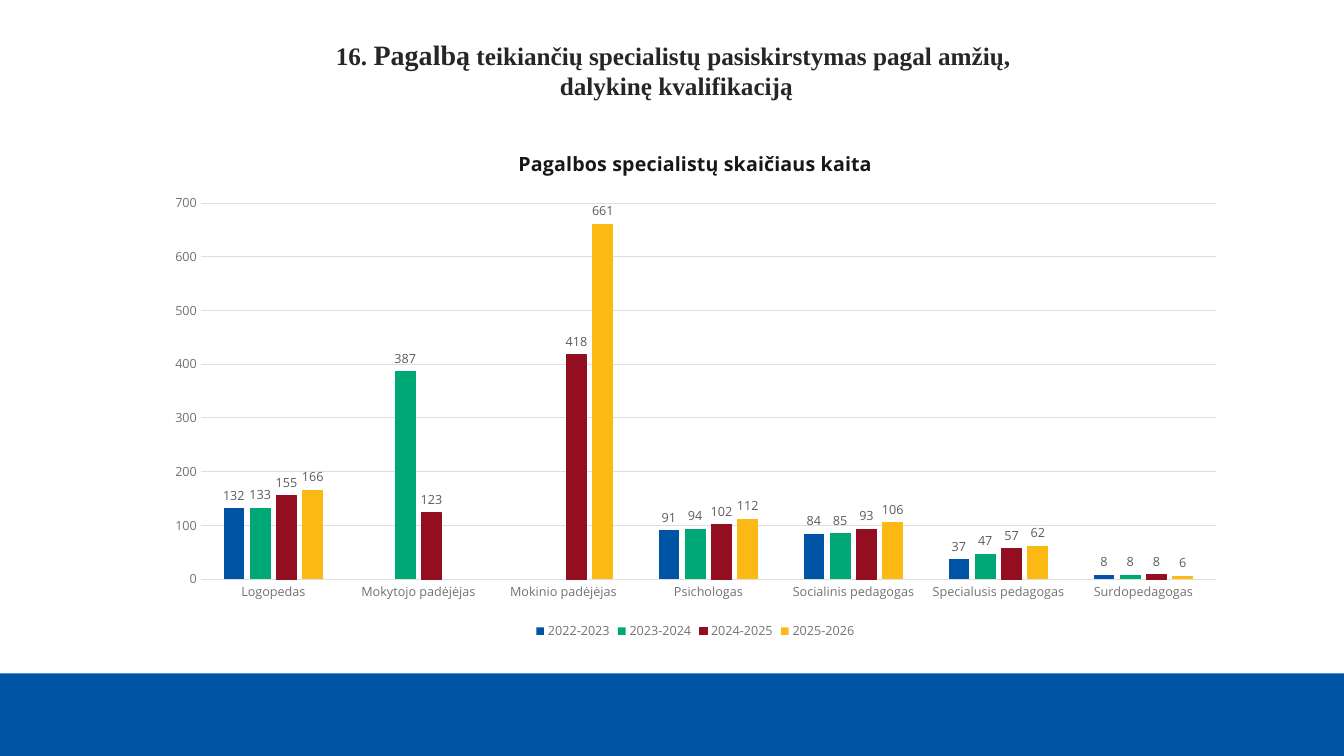
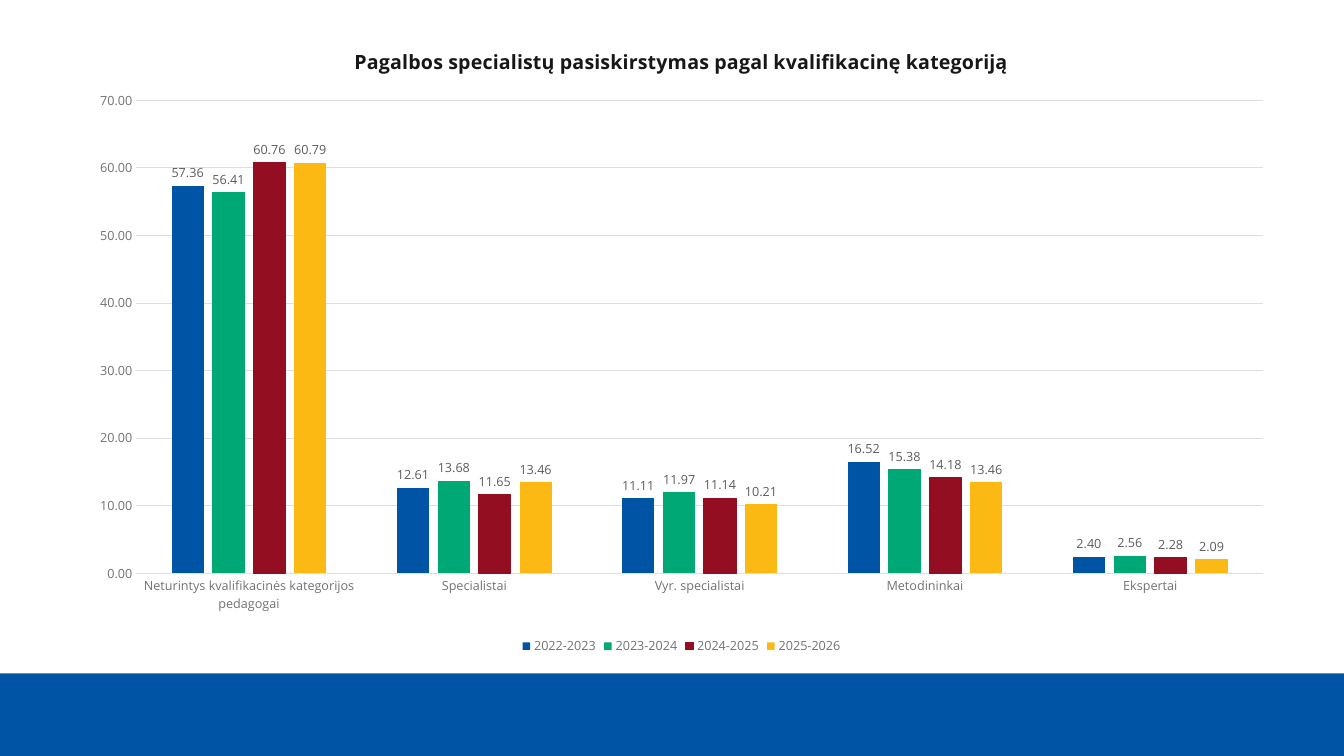
from dataclasses import dataclass

import lxml.etree
import pptx
import pptx.chart.data
import pptx.dml.color
import pptx.enum.chart
import pptx.enum.shapes
import pptx.enum.text
import pptx.oxml
import pptx.oxml.ns
import pptx.util

Cm = pptx.util.Cm
Pt = pptx.util.Pt
qn = pptx.oxml.ns.qn


@dataclass(frozen=True)
class Theme:
    # Colours
    band: str = "0054A5"
    heading: str = "262626"
    chart_title: str = "181717"
    axis: str = "727272"
    label: str = "5C5C5C"
    grid: str = "DEDEDE"
    series: tuple = ("0054A5", "00A875", "940E22", "FCB813")
    outlined: str = "940E22"
    # Fonts and sizes
    heading_font: str = "Times New Roman"
    chart_font: str = "Open Sans"
    heading_size: float = 18
    emphasis_size: float = 20
    chart_title_size: float = 14
    chart_size: float = 10
    small_size: float = 9
    line_width: float = 0.75


THEME = Theme()
YEARS = ("2022-2023", "2023-2024", "2024-2025", "2025-2026")


def rgb(value):
    return pptx.dml.color.RGBColor.from_string(value)


def set_font(font, name, size, color, bold=False):
    font.name = name
    font.size = Pt(size)
    font.bold = bold
    font.color.rgb = rgb(color)


def set_line(line, color):
    line.color.rgb = rgb(color)
    line.width = Pt(THEME.line_width)


def add_slide(prs):
    """Blank slide with the shared footer band."""
    s = prs.slides.add_slide(prs.slide_layouts[6])
    height = Cm(2.08)
    band = s.shapes.add_shape(pptx.enum.shapes.MSO_SHAPE.RECTANGLE,
                              0, prs.slide_height - height, prs.slide_width, height)
    band.shadow.inherit = False
    band.fill.solid()
    band.fill.fore_color.rgb = rgb(THEME.band)
    band.line.fill.background()
    return s


def add_heading(s, box, lines):
    """Centred heading; each line is a list of (text, size) runs."""
    tf = s.shapes.add_textbox(*box).text_frame
    tf.word_wrap = False
    tf.auto_size = pptx.enum.text.MSO_AUTO_SIZE.SHAPE_TO_FIT_TEXT
    for i, line in enumerate(lines):
        p = tf.add_paragraph() if i else tf.paragraphs[0]
        p.alignment = pptx.enum.text.PP_ALIGN.CENTER
        for text, size in line:
            r = p.add_run()
            r.text = text
            set_font(r.font, THEME.heading_font, size, THEME.heading, True)


def set_plot_layout(chart, fractions):
    """Fix the inner plot area as fractions (x, y, w, h) of the chart."""
    plot_area = chart.element.find(".//" + qn("c:plotArea"))
    for old in plot_area.findall(qn("c:layout")):
        plot_area.remove(old)
    layout = lxml.etree.Element(qn("c:layout"))
    manual = lxml.etree.SubElement(layout, qn("c:manualLayout"))
    settings = [("layoutTarget", "inner"), ("xMode", "edge"), ("yMode", "edge")]
    settings += zip("xywh", fractions)
    for tag, value in settings:
        lxml.etree.SubElement(manual, qn("c:" + tag)).set("val", str(value))
    plot_area.insert(0, layout)


def style_axes(chart, step, number_format):
    for axis in (chart.category_axis, chart.value_axis):
        axis.major_tick_mark = pptx.enum.chart.XL_TICK_MARK.NONE
        axis.minor_tick_mark = pptx.enum.chart.XL_TICK_MARK.NONE
        set_font(axis.tick_labels.font, THEME.chart_font, THEME.small_size, THEME.axis)
    set_line(chart.category_axis.format.line, THEME.grid)

    values = chart.value_axis
    values.minimum_scale, values.maximum_scale, values.major_unit = 0, 7 * step, step
    values.format.line.fill.background()
    values.has_major_gridlines = True
    set_line(values.major_gridlines.format.line, THEME.grid)
    values.tick_labels.number_format = number_format
    values.tick_labels.number_format_is_linked = False


def style_series(plot, number_format):
    plot.gap_width = 219
    plot.overlap = -27
    plot.vary_by_categories = False
    for series, color in zip(plot.series, THEME.series):
        series.invert_if_negative = False
        series.format.fill.solid()
        series.format.fill.fore_color.rgb = rgb(color)
        if color == THEME.outlined:
            set_line(series.format.line, color)
        labels = series.data_labels
        labels.show_value = True
        labels.position = pptx.enum.chart.XL_LABEL_POSITION.OUTSIDE_END
        labels.number_format = number_format
        labels.number_format_is_linked = False
        set_font(labels.font, THEME.chart_font, THEME.small_size, THEME.label)


def add_column_chart(s, box, title, rows, step, number_format, plot_layout):
    """Clustered columns by school year; rows map a category to its values."""
    data = pptx.chart.data.CategoryChartData(number_format=number_format)
    data.categories = list(rows)
    for year, values in zip(YEARS, zip(*rows.values())):
        data.add_series(year, values)
    kind = pptx.enum.chart.XL_CHART_TYPE.COLUMN_CLUSTERED
    chart = s.shapes.add_chart(kind, *box, data).chart
    set_font(chart.font, THEME.chart_font, THEME.chart_size, THEME.heading)

    # Title
    chart.has_title = True
    tf = chart.chart_title.text_frame
    tf.text = title
    set_font(tf.paragraphs[0].runs[0].font, THEME.chart_font,
             THEME.chart_title_size, THEME.chart_title, True)

    # Legend
    chart.has_legend = True
    chart.legend.position = pptx.enum.chart.XL_LEGEND_POSITION.BOTTOM
    chart.legend.include_in_layout = False
    set_font(chart.legend.font, THEME.chart_font, THEME.small_size, THEME.axis)

    # Axes and columns
    style_axes(chart, step, number_format)
    style_series(chart.plots[0], number_format)
    set_plot_layout(chart, plot_layout)


def build_headcount_slide(prs):
    s = add_slide(prs)
    size = THEME.heading_size
    add_heading(s, (Cm(8.13), Cm(0.81), Cm(17.83), Cm(1.88)), [
        [("16. ", size), ("Pagalbą", THEME.emphasis_size),
         (" teikiančių specialistų pasiskirstymas pagal amžių, ", size)],
        [("dalykinę kvalifikaciją", size)],
    ])
    rows = {
        "Logopedas": (132, 133, 155, 166),
        "Mokytojo padėjėjas": (None, 387, 123, None),
        "Mokinio padėjėjas": (None, None, 418, 661),
        "Psichologas": (91, 94, 102, 112),
        "Socialinis pedagogas": (84, 85, 93, 106),
        "Specialusis pedagogas": (37, 47, 57, 62),
        "Surdopedagogas": (8, 8, 8, 6),
    }
    add_column_chart(s, (Cm(3.86), Cm(3.25), Cm(27.33), Cm(12.98)),
                     "Pagalbos specialistų skaičiaus kaita",
                     rows, 100, "#,##0", (0.044, 0.144, 0.936, 0.73))


def build_qualification_slide(prs):
    s = add_slide(prs)
    rows = {
        "Neturintys kvalifikacinės kategorijos pedagogai": (57.36, 56.41, 60.76, 60.79),
        "Specialistai": (12.61, 13.68, 11.65, 13.46),
        "Vyr. specialistai": (11.11, 11.97, 11.14, 10.21),
        "Metodininkai": (16.52, 15.38, 14.18, 13.46),
        "Ekspertai": (2.4, 2.56, 2.28, 2.09),
    }
    add_column_chart(s, (Cm(1.91), Cm(0.61), Cm(30.53), Cm(16)),
                     "Pagalbos specialistų pasiskirstymas pagal kvalifikacinę kategoriją",
                     rows, 10, "0.00", (0.05, 0.12, 0.93, 0.745))


def main():
    prs = pptx.Presentation()
    prs.slide_width, prs.slide_height = Cm(33.87), Cm(19.05)
    build_headcount_slide(prs)
    build_qualification_slide(prs)
    prs.save("out.pptx")


if __name__ == "__main__":
    main()
